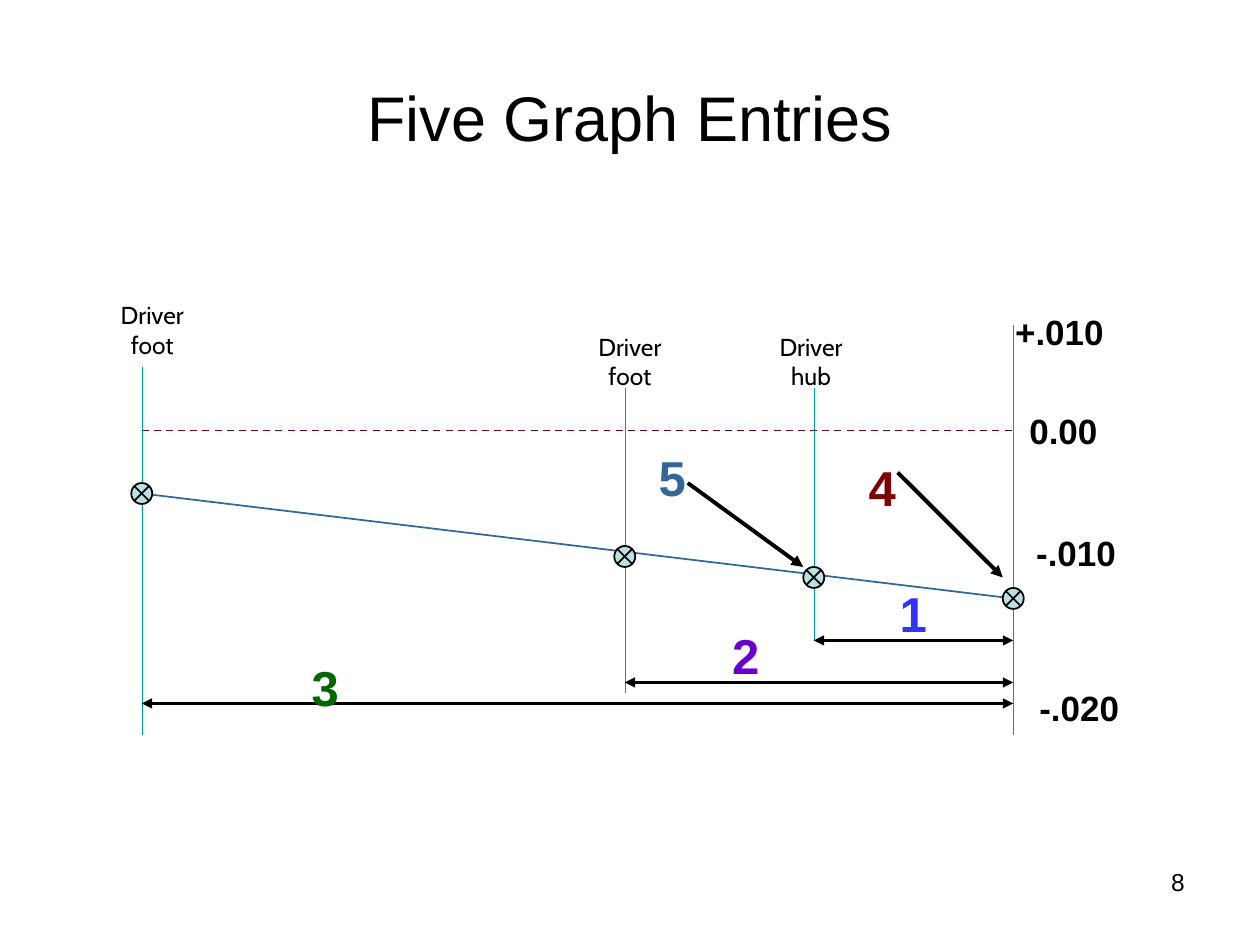
from lxml import etree
from pptx import Presentation
from pptx.dml.color import RGBColor
from pptx.enum.dml import MSO_LINE
from pptx.enum.shapes import MSO_CONNECTOR, MSO_SHAPE
from pptx.enum.text import MSO_ANCHOR, PP_ALIGN
from pptx.oxml.ns import qn
from pptx.util import Inches, Pt

LEFT, CENTER, RIGHT = PP_ALIGN.LEFT, PP_ALIGN.CENTER, PP_ALIGN.RIGHT
STRAIGHT, JUNCTION = MSO_CONNECTOR.STRAIGHT, MSO_SHAPE.FLOWCHART_SUMMING_JUNCTION
COLORS = {
    "black": "000000", "teal": "009999", "plum": "660033", "steel": "336699",
    "marker": "BBE0E3", "blue": "3333FF", "purple": "6600CC", "maroon": "800000",
    "green": "006600",
}

prs = Presentation()
prs.slide_width, prs.slide_height = Inches(10), Inches(7.5)
slide = prs.slides.add_slide(prs.slide_layouts[5])
CELL = prs.slide_width / 240  # the slide is a grid of 240 columns by 180 rows


def write(holder, words, col, row, cols, rows, size, align, color="black", font="Arial", bold=False):
    holder.left, holder.top, holder.width, holder.height = (
        int(n * CELL) for n in (col, row, cols, rows))
    holder.text_frame.word_wrap = True
    paragraph = holder.text_frame.paragraphs[0]
    paragraph.alignment = align
    run = paragraph.add_run()
    run.text = words
    run.font.name, run.font.size, run.font.bold = font, Pt(size), bold
    run.font.color.rgb = RGBColor.from_string(COLORS[color])


def draw_line(start, end, color, width, arrows=()):
    line = slide.shapes.add_connector(STRAIGHT, *(int(n * CELL) for n in start + end))
    line.line.color.rgb = RGBColor.from_string(COLORS[color])
    line.line.width = Pt(width)
    for arrow in arrows:
        etree.SubElement(line.line._get_or_add_ln(), qn(f"a:{arrow}"), type="triangle")
    etree.SubElement(line._element.spPr, qn("a:effectLst"))
    return line


# Title and page number
title = slide.shapes.title
write(title, "Five Graph Entries", 12, 7.2, 216, 30, 36, CENTER)
title.text_frame.vertical_anchor = MSO_ANCHOR.MIDDLE
write(slide.shapes.add_textbox(0, 0, 0, 0), "8", 172, 164, 56, 12.4, 14, RIGHT)

# Stations along the shaft
REAR_FOOT, FRONT_FOOT, HUB, SCALE = 27, 119, 155, 193

# Zero line, verticals and shaft line
zero_line = draw_line((REAR_FOOT, 82), (SCALE, 82), "plum", 1)
zero_line.line.dash_style = MSO_LINE.DASH
for station, top, bottom in ((SCALE, 62, 140), (HUB, 74, 122),
                             (FRONT_FOOT, 74, 132), (REAR_FOOT, 70, 140)):
    draw_line((station, top), (station, bottom), "teal", 0.25)
draw_line((REAR_FOOT, 94), (SCALE, 114), "steel", 1)

# Station names
for name, col, row, cols in (("Driver hub", 142.5, 62, 24),
                             ("Driver foot", 109, 62, 22),
                             ("Driver foot", 19, 56, 20)):
    write(slide.shapes.add_textbox(0, 0, 0, 0), name, col, row, cols, 13.7, 14, CENTER, font="Cabin")

# Distances measured from the scale
for station, row in ((HUB, 122), (FRONT_FOOT, 130), (REAR_FOOT, 134)):
    draw_line((SCALE, row), (station, row), "black", 1.5, ("headEnd", "tailEnd"))

# Entry numbers
for number, col, row, cols, align, color in (
        ("1", 169, 110, 8, RIGHT, "blue"), ("2", 137, 118, 10, RIGHT, "purple"),
        ("3", 57, 124, 16, LEFT, "green"), ("4", 163, 86, 10, RIGHT, "maroon"),
        ("5", 123, 84, 10, RIGHT, "steel")):
    write(slide.shapes.add_textbox(0, 0, 0, 0), number, col, row, cols, 12, 28, align, color, bold=True)

# Pointers from entries 4 and 5
for start, end in (((171, 90), (191, 110)), ((131, 92), (153, 108))):
    draw_line(start, end, "black", 2.25, ("tailEnd",))

# Measured points
for station, row in ((HUB, 110), (REAR_FOOT, 94), (FRONT_FOOT, 106), (SCALE, 114)):
    point = slide.shapes.add_shape(
        JUNCTION, *(int(n * CELL) for n in (station - 2, row - 2, 4, 4)))
    point.shadow.inherit = False
    point.fill.solid()
    point.fill.fore_color.rgb = RGBColor.from_string(COLORS["marker"])
    point.line.color.rgb = RGBColor.from_string(COLORS["black"])
    point.line.width = Pt(1)

# Scale values
for value, col, row in (("+.010", 191, 58), ("0.00", 193.7, 76.8),
                        ("-.010", 195, 100), ("-.020", 195.6, 129.6)):
    write(slide.shapes.add_textbox(0, 0, 0, 0), value, col, row, 25, 10.4, 20, LEFT, bold=True)

prs.save("out.pptx")
